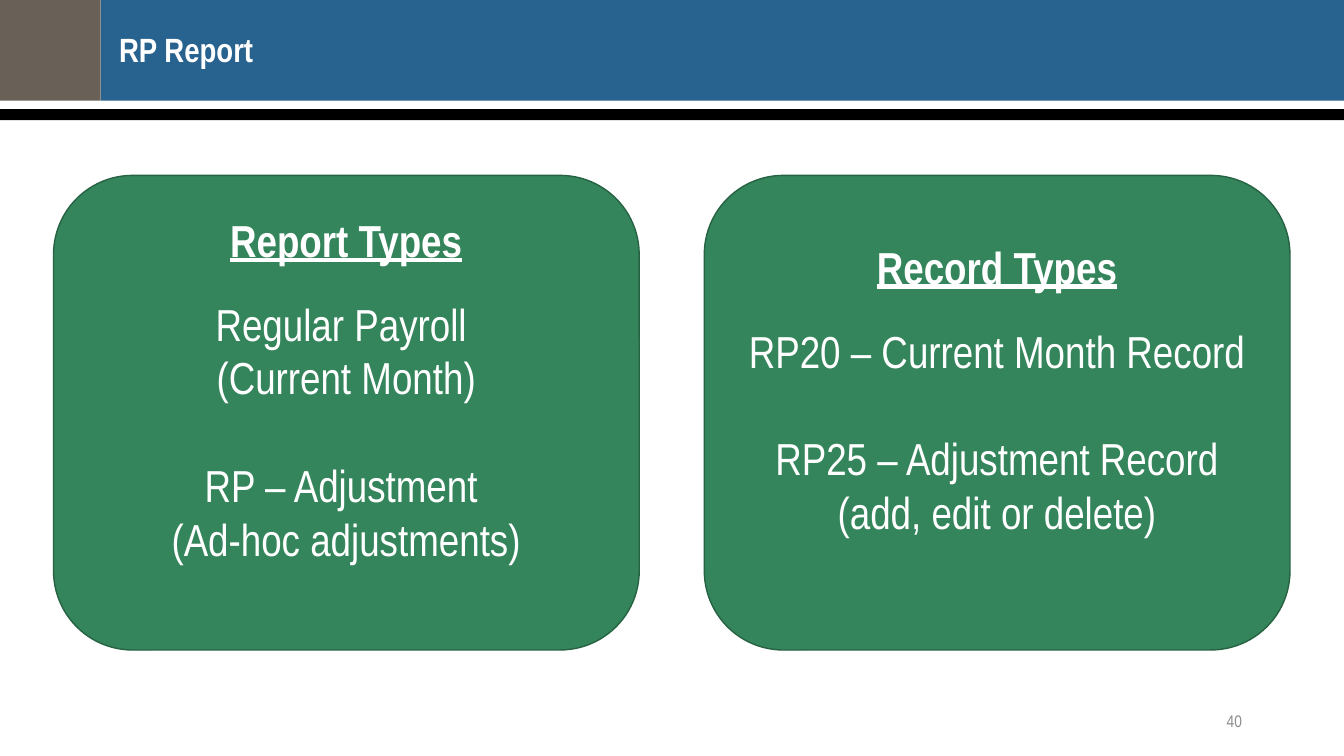
from pptx import Presentation
from pptx.dml.color import RGBColor
from pptx.enum.shapes import MSO_SHAPE as Preset
from pptx.enum.text import MSO_ANCHOR as Anchor, PP_ALIGN as Align
from pptx.util import Cm, Pt

FONT = "Arial Narrow"
COLORS = {
    "banner": "28628E",
    "corner": "696057",
    "rule": "000000",
    "card": "34855B",
    "card_edge": "266243",
    "light": "FFFFFF",
    "page": "8C8C8C",
}
SLIDE_WIDTH, SLIDE_HEIGHT = Cm(33.87), Cm(19.05)
CARD_TOP, CARD_WIDTH, CARD_HEIGHT = Cm(4.42), Cm(14.76), Cm(11.96)
HEADING_GAP, GROUP_GAP = Pt(21.5), Pt(38.5)


def color(name):
    return RGBColor.from_string(COLORS[name])


def add_run(paragraph, text, size, color_name, bold=False, underline=False):
    run = paragraph.add_run()
    run.text = text
    font = run.font
    font.name, font.size = FONT, Pt(size)
    font.bold, font.underline = bold, underline
    font.color.rgb = color(color_name)


def add_block(slide, preset, left, top, width, height, fill, edge=None):
    block = slide.shapes.add_shape(preset, left, top, width, height)
    block.shadow.inherit = False
    block.fill.solid()
    block.fill.fore_color.rgb = color(fill)
    if edge:
        block.line.color.rgb = color(edge)
        block.line.width = Pt(1)
    else:
        block.line.fill.background()
    return block


def add_header(slide, text):
    corner = Cm(2.54)
    add_block(slide, Preset.RECTANGLE, corner, 0, SLIDE_WIDTH - corner, corner, "banner")
    add_block(slide, Preset.RECTANGLE, 0, 0, corner, corner, "corner")
    add_block(slide, Preset.RECTANGLE, 0, Cm(2.75), SLIDE_WIDTH, Cm(0.28), "rule")

    title = slide.shapes.title
    slide.shapes.element.append(title.element)  # bring in front of the banner
    title.left, title.top, title.width, title.height = Cm(3), Cm(0.84), Cm(28.52), Cm(1.42)
    frame = title.text_frame
    frame.margin_left = frame.margin_top = frame.margin_right = frame.margin_bottom = 0
    frame.vertical_anchor = Anchor.TOP
    heading = frame.paragraphs[0]
    heading.alignment, heading.line_spacing = Align.LEFT, 0.9
    add_run(heading, text, 24, "light", bold=True)


def add_card(slide, left, heading, groups):
    """Rounded card with an underlined heading above spaced groups of lines."""
    card = add_block(slide, Preset.ROUNDED_RECTANGLE, left, CARD_TOP,
                     CARD_WIDTH, CARD_HEIGHT, "card", "card_edge")
    frame = card.text_frame
    frame.word_wrap = True
    frame.vertical_anchor = Anchor.MIDDLE
    frame.margin_bottom = Cm(1.32)
    first = frame.paragraphs[0]
    first.alignment = Align.CENTER
    add_run(first, heading, 32, "light", bold=True, underline=True)

    gap = HEADING_GAP
    for lines in groups:
        for line in lines:
            paragraph = frame.add_paragraph()
            paragraph.alignment = Align.CENTER
            paragraph.space_before = gap
            add_run(paragraph, line, 32, "light")
            gap = Pt(0)
        gap = GROUP_GAP


def add_page_number(slide, number):
    box = slide.shapes.add_textbox(Cm(23.93), Cm(17.65), Cm(7.62), Cm(1.02))
    frame = box.text_frame
    frame.word_wrap = True
    frame.vertical_anchor = Anchor.MIDDLE
    frame.paragraphs[0].alignment = Align.RIGHT
    add_run(frame.paragraphs[0], number, 12, "page")


def main():
    deck = Presentation()
    deck.slide_width, deck.slide_height = SLIDE_WIDTH, SLIDE_HEIGHT
    slide = deck.slides.add_slide(deck.slide_layouts.get_by_name("Title Only"))

    add_header(slide, "RP Report")
    add_page_number(slide, "40")
    add_card(slide, Cm(1.35), "Report Types", [
        ["Regular Payroll ", "(Current Month)"],
        ["RP – Adjustment ", "(Ad-hoc adjustments)"],
    ])
    add_card(slide, Cm(17.75), "Record Types", [
        ["RP20 – Current Month Record"],
        ["RP25 – Adjustment Record (add, edit or delete)"],
    ])
    deck.save("out.pptx")


if __name__ == "__main__":
    main()
